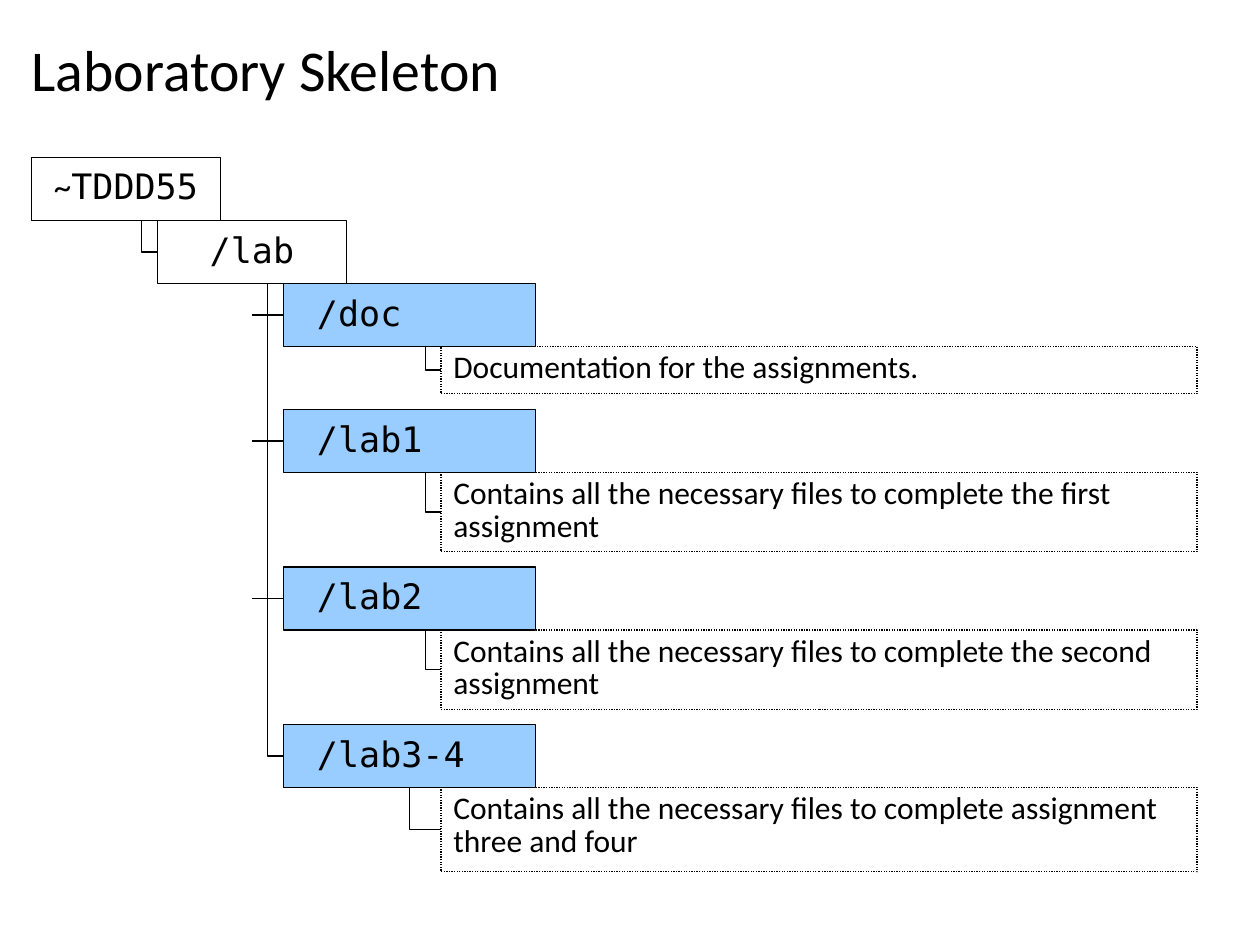
import pptx
import pptx.util
import pptx.dml.color
import pptx.enum.dml
import pptx.enum.shapes
import pptx.enum.text
import pptx.oxml.ns
from lxml import etree

TITLE = "Laboratory Skeleton"
BODY, CODE = "Calibri", "DejaVu Sans Mono"
COLORS = {"ink": "000000", "folder": "99CCFF"}

# Positions and sizes are in grid units of 1.27 cm
GRID = 1.27
FOLDER_H = 1
PARENTS = [  # left, top, line spacing, runs
    (0.5, 2.5, 0.86, [("~", BODY), ("TDDD55", CODE)]),
    (2.5, 3.5, 0.9, [("/lab", CODE)]),
]
CHILDREN = [  # top, name, note height, note
    (4.5, " /doc", 0.75, "Documentation for the assignments."),
    (6.5, " /lab1", 1.26, "Contains all the necessary files to complete the first assignment"),
    (9, " /lab2", 1.26, "Contains all the necessary files to complete the second assignment"),
    (11.5, " /lab3-4", 1.34, "Contains all the necessary files to complete assignment three and four"),
]
PARENT_W, CHILD_X, CHILD_W = 3, 4.5, 4
NOTE_X, NOTE_W = 7, 12
STEP = 0.5  # width of an elbow


def grid(n):
    return pptx.util.Cm(n * GRID)


def rgb(name):
    return pptx.dml.color.RGBColor.from_string(COLORS[name])


def write(p, runs, size, spacing):
    p.line_spacing = spacing
    for text, font in runs:
        r = p.add_run()
        r.text = text
        r.font.name = font
        r.font.size = pptx.util.Pt(size)
        r.font.color.rgb = rgb("ink")


def draw_outline(line):
    line.color.rgb = rgb("ink")
    line.width = pptx.util.Pt(0.75)


def add_box(s, x, y, w, h, runs, size, spacing, align, fill=None):
    sp = s.shapes.add_shape(pptx.enum.shapes.MSO_SHAPE.RECTANGLE,
                            grid(x), grid(y), grid(w), grid(h))
    sp.shadow.inherit = False
    draw_outline(sp.line)
    if fill:
        sp.fill.solid()
        sp.fill.fore_color.rgb = rgb(fill)
    else:
        sp.fill.background()
    p = sp.text_frame.paragraphs[0]
    p.alignment = align
    write(p, runs, size, spacing)
    return sp


def add_folder(s, x, y, w, runs, spacing, align, fill=None):
    sp = add_box(s, x, y, w, FOLDER_H, runs, 20, spacing, align, fill)
    sp.text_frame.word_wrap = False
    sp.text_frame.vertical_anchor = pptx.enum.text.MSO_ANCHOR.MIDDLE


def add_note(s, y, h, text):
    sp = add_box(s, NOTE_X, y, NOTE_W, h, [(text, BODY)], 18, 0.86,
                 pptx.enum.text.PP_ALIGN.LEFT)
    sp.line.dash_style = pptx.enum.dml.MSO_LINE.ROUND_DOT
    sp.text_frame.word_wrap = True
    sp.text_frame.vertical_anchor = pptx.enum.text.MSO_ANCHOR.TOP


def add_elbow(s, x1, y1, x2, y2):
    cxn = s.shapes.add_connector(pptx.enum.shapes.MSO_CONNECTOR.ELBOW,
                                 grid(x1), grid(y1), grid(x2), grid(y2))
    draw_outline(cxn.line)
    etree.SubElement(cxn._element.spPr, pptx.oxml.ns.qn("a:effectLst"))
    return cxn


def add_corner(s, x1, y1, x2, y2):
    """Connector with a single bend: across first, then up or down."""
    cxn = add_elbow(s, x1, y1, x2, y2)
    cxn._element.spPr.find(pptx.oxml.ns.qn("a:prstGeom")).set("prst", "bentConnector2")


def add_title(s):
    title = s.shapes.title
    title.left, title.top = grid(0.5), grid(0.48)
    title.width, title.height = grid(18.5), grid(1.3)
    tf = title.text_frame
    tf.margin_left = tf.margin_right = tf.margin_top = tf.margin_bottom = 0
    tf.vertical_anchor = pptx.enum.text.MSO_ANCHOR.MIDDLE
    tf.paragraphs[0].alignment = pptx.enum.text.PP_ALIGN.LEFT
    write(tf.paragraphs[0], [(TITLE, BODY)], 33, 0.96)


def main():
    prs = pptx.Presentation()
    prs.slide_width, prs.slide_height = pptx.util.Cm(25.4), pptx.util.Cm(19.05)
    s = prs.slides.add_slide(prs.slide_layouts[5])
    add_title(s)

    for x, y, spacing, runs in PARENTS:
        add_folder(s, x, y, PARENT_W, runs, spacing, pptx.enum.text.PP_ALIGN.CENTER)
    lab_x, lab_y = PARENTS[1][:2]
    add_elbow(s, lab_x - STEP, lab_y, lab_x, lab_y + FOLDER_H / 2)

    trunk_y = lab_y + FOLDER_H
    for i, (y, name, note_h, note) in enumerate(CHILDREN):
        add_folder(s, CHILD_X, y, CHILD_W, [(name, CODE)], 0.9,
                   pptx.enum.text.PP_ALIGN.LEFT, "folder")
        middle = y + FOLDER_H / 2
        if i == 0:
            add_elbow(s, CHILD_X - STEP, trunk_y, CHILD_X, middle)
        else:
            add_elbow(s, CHILD_X, middle, CHILD_X - STEP, trunk_y)
        trunk_y = middle

        note_y = y + FOLDER_H
        add_note(s, note_y, note_h, note)
        note_middle = note_y + note_h / 2
        if i < len(CHILDREN) - 1:
            add_elbow(s, NOTE_X - STEP, note_y, NOTE_X, note_middle)
        else:
            add_corner(s, NOTE_X, note_middle, NOTE_X - STEP, note_y)

    prs.save("out.pptx")


if __name__ == "__main__":
    main()
